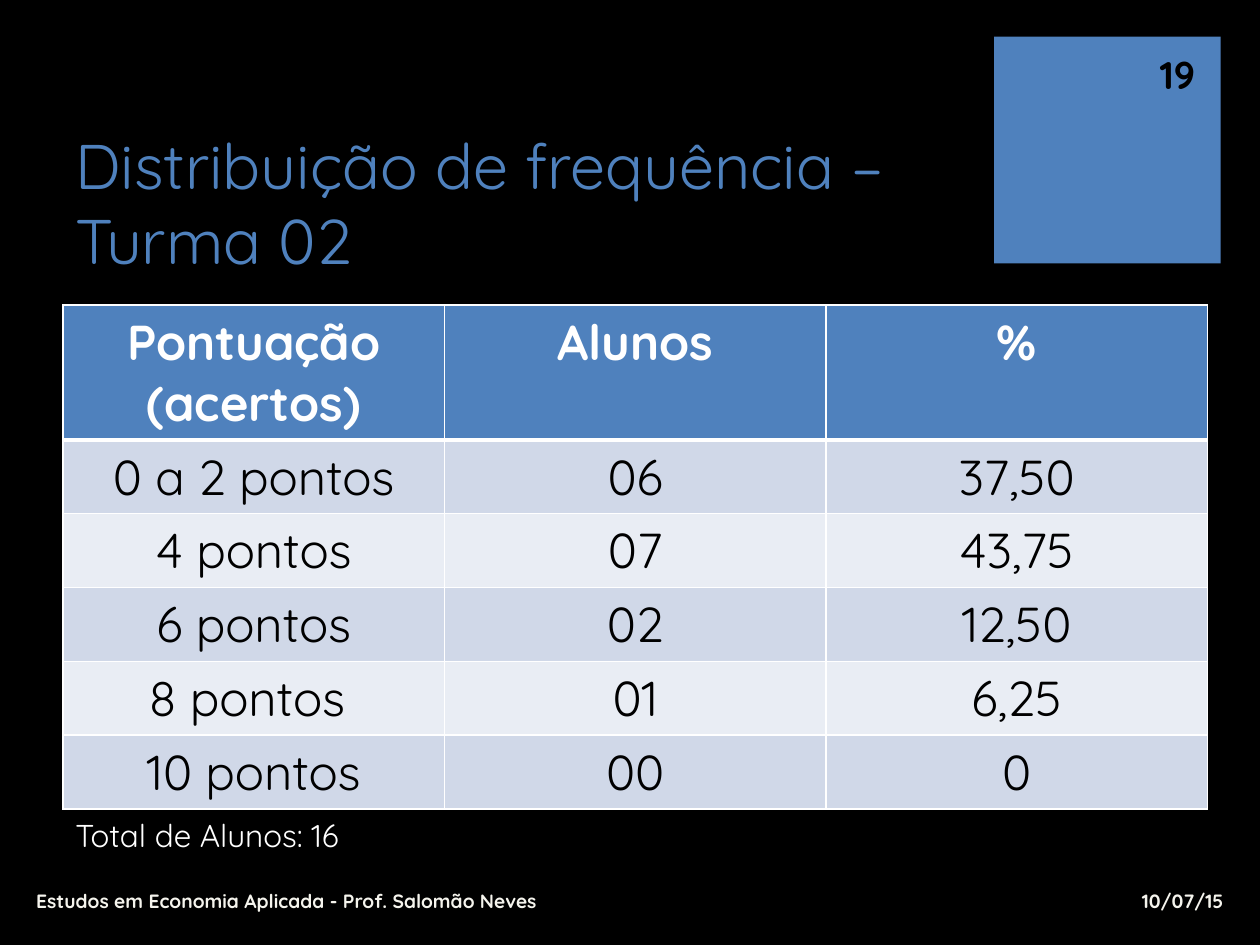
import pptx
import pptx.util
import pptx.dml.color
import pptx.enum.text
import pptx.enum.shapes
import pptx.oxml
import pptx.oxml.ns

Cm = pptx.util.Cm
Pt = pptx.util.Pt
RGB = pptx.dml.color.RGBColor
Align = pptx.enum.text.PP_ALIGN
Anchor = pptx.enum.text.MSO_ANCHOR

BLACK = RGB(0, 0, 0)
WHITE = RGB(255, 255, 255)
CREAM = RGB(0xF5, 0xF4, 0xED)
BLUE = RGB(0x4F, 0x81, 0xBD)
BANDS = [RGB(0xE9, 0xED, 0xF4), RGB(0xD0, 0xD8, 0xE8)]
FONT = "Quicksand"

TITLE = "Distribuição de frequência – Turma 02"
ROWS = [
    ("Pontuação (acertos)", "Alunos", "%"),
    ("0 a 2 pontos", "06", "37,50"),
    ("4 pontos", "07", "43,75"),
    ("6 pontos", "02", "12,50"),
    ("8 pontos ", "01", "6,25"),
    ("10 pontos", "00", "0"),
]
SMALL = {"size": Pt(11), "bold": True}
NOTES = [
    ("10/07/15", (20.04, 17.65, 4.88, 1.02), Align.RIGHT, Anchor.MIDDLE, True, CREAM, SMALL),
    ("Estudos em Economia Aplicada - Prof. Salomão Neves",
     (0.48, 17.65, 16.69, 1.02), Align.LEFT, Anchor.MIDDLE, True, CREAM, SMALL),
    ("19", (22.94, 0.99, 1.4, 1.02), Align.RIGHT, Anchor.MIDDLE, True, BLACK,
     {"size": Pt(22), "bold": True}),
    ("Total de Alunos: 16", (1.27, 16.33, 6.3, 1.02), Align.LEFT, Anchor.TOP, False, WHITE,
     {"size": Pt(18), "bold": False}),
]


def write(frame, text, look, tint, align):
    par = frame.paragraphs[0]
    par.alignment = align
    run = par.add_run()
    run.text = text
    for key, value in {"name": FONT, **look}.items():
        setattr(run.font, key, value)
    run.font.color.rgb = tint


def edge(cell, sides):
    props = cell._tc.get_or_add_tcPr()
    for place, (side, width) in enumerate(sides.items()):
        props.insert(place, pptx.oxml.parse_xml(
            f'<a:ln{side} {pptx.oxml.ns.nsdecls("a")} w="{Pt(width)}">'
            f'<a:solidFill><a:srgbClr val="{WHITE}"/></a:solidFill></a:ln{side}>'))


def main():
    deck = pptx.Presentation()
    deck.slide_width, deck.slide_height = Cm(25.4), Cm(19.05)
    slide = deck.slides.add_slide(deck.slide_layouts[5])
    slide.background.fill.solid()
    slide.background.fill.fore_color.rgb = BLACK

    square = slide.shapes.add_shape(
        pptx.enum.shapes.MSO_SHAPE.RECTANGLE, Cm(20.04), Cm(0.74), Cm(4.57), Cm(4.57))
    square.shadow.inherit = False
    square.fill.solid()
    square.fill.fore_color.rgb = BLUE
    square.line.fill.background()

    title = slide.shapes.title
    spot = {"left": 1.27, "top": 2.54, "width": 18.08, "height": 3.18}
    for key, value in spot.items():
        setattr(title, key, Cm(value))
    title.text_frame.vertical_anchor = Anchor.BOTTOM
    title.text_frame.word_wrap = True
    title.text_frame.auto_size = pptx.enum.text.MSO_AUTO_SIZE.NONE
    write(title.text_frame, TITLE, {"size": Pt(36)}, BLUE, Align.LEFT)

    grid = slide.shapes.add_table(
        len(ROWS), len(ROWS[0]), Cm(1.27), Cm(6.15), Cm(23.07), Cm(1.04 * len(ROWS))).table
    for r, row in enumerate(ROWS):
        head = r == 0
        for c, text in enumerate(row):
            cell = grid.cell(r, c)
            cell.fill.solid()
            cell.fill.fore_color.rgb = BLUE if head else BANDS[r % 2]
            write(cell.text_frame, text, {"size": Pt(28), "bold": head},
                  WHITE if head else BLACK, Align.CENTER)
            edge(cell, {"L": 1, "R": 1, "T": 3 if r == 1 else 1, "B": 3 if head else 1})

    for text, place, align, anchor, wrap, tint, look in NOTES:
        frame = slide.shapes.add_textbox(*map(Cm, place)).text_frame
        frame.word_wrap = wrap
        frame.vertical_anchor = anchor
        write(frame, text, look, tint, align)

    deck.save("out.pptx")


if __name__ == "__main__":
    main()
